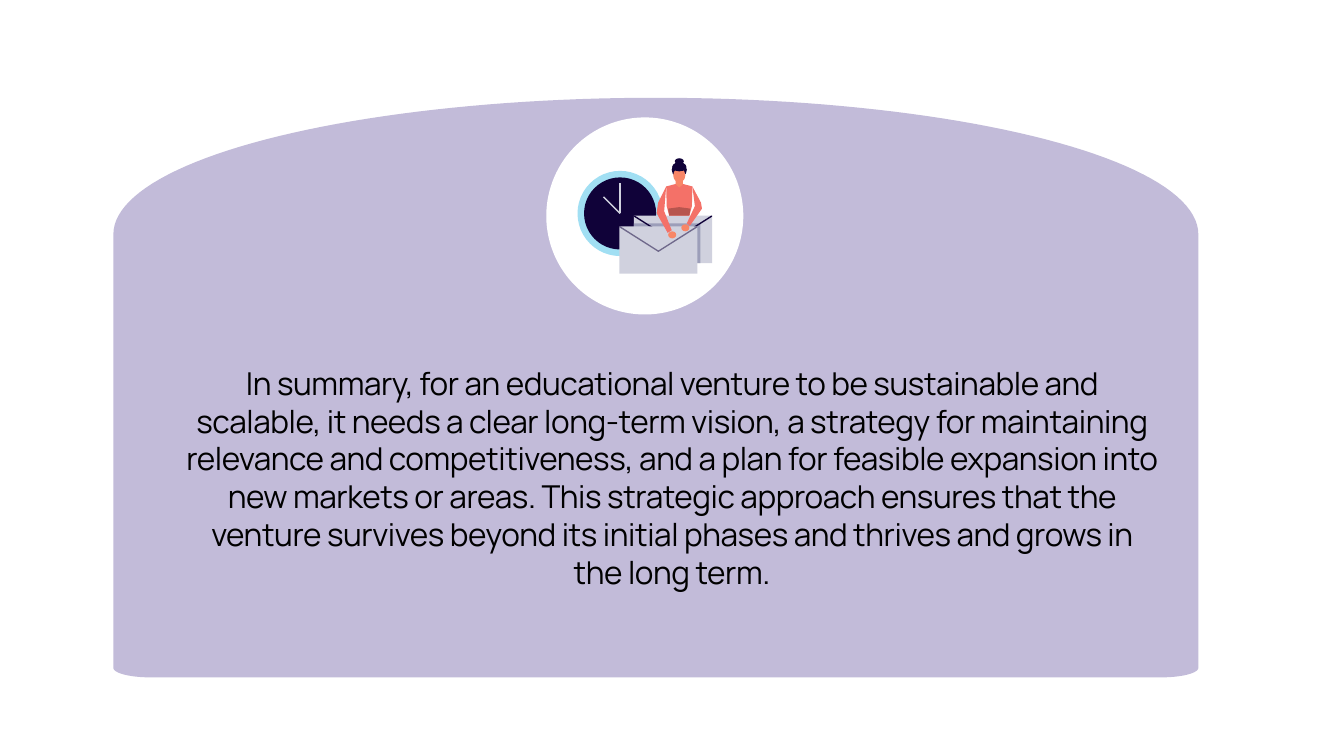
import math
from dataclasses import dataclass

import pptx
import pptx.dml.color
import pptx.enum.shapes
import pptx.enum.text
import pptx.oxml
import pptx.oxml.ns
import pptx.util
from pptx.util import Inches


@dataclass(frozen=True)
class Theme:
    lilac: str = "C2BBD9"
    white: str = "FFFFFF"
    black: str = "000000"
    navy: str = "100239"
    sky: str = "A1DFF3"
    paper: str = "D0D1DE"
    paper_shade: str = "9C9EB9"
    coral: str = "F47168"
    coral_shade: str = "B7554E"
    skin: str = "F88667"
    font: str = "Manrope"
    body_size: float = 45
    body_tracking: float = -0.6


THEME = Theme()
OVAL = pptx.enum.shapes.MSO_SHAPE.OVAL
RECTANGLE = pptx.enum.shapes.MSO_SHAPE.RECTANGLE


def rgb(color):
    return pptx.dml.color.RGBColor.from_string(color)


def paint(shape, color, opacity=None):
    shape.shadow.inherit = False
    shape.fill.solid()
    shape.fill.fore_color.rgb = rgb(color)
    shape.line.fill.background()
    if opacity is not None:
        fill_color = shape._element.spPr.find(".//" + pptx.oxml.ns.qn("a:srgbClr"))
        namespace = pptx.oxml.ns.nsdecls("a")
        fill_color.append(pptx.oxml.parse_xml(f'<a:alpha {namespace} val="{opacity * 1000}"/>'))


def add_preset(shapes, preset, left, top, width, height, color):
    paint(shapes.add_shape(preset, *map(Inches, (left, top, width, height))), color)


def add_polygon(shapes, left, top, points, color, opacity=None):
    corners = [(Inches(left + x), Inches(top + y)) for x, y in points]
    builder = shapes.build_freeform(*corners[0])
    builder.add_line_segments(corners[1:], close=True)
    paint(builder.convert_to_shape(), color, opacity)


def add_panel(shapes, left, top, width, height):
    """Panel with a wide arched top and slightly rounded bottom corners."""
    arch, foot = (width / 2, 2.71), (0.73, 0.19)
    points = []
    for quarter, (radius_x, radius_y) in enumerate((foot, foot, arch, arch)):
        center_x = radius_x if quarter in (1, 2) else width - radius_x
        center_y = height - radius_y if quarter < 2 else radius_y
        for degrees in range(quarter * 90, quarter * 90 + 91, 2):
            angle = math.radians(degrees)
            points.append((center_x + radius_x * math.cos(angle),
                           center_y + radius_y * math.sin(angle)))
    add_polygon(shapes, left, top, points, THEME.lilac)


def add_clock(shapes, left, top, size):
    rim, center = 0.13, size / 2
    add_preset(shapes, OVAL, left, top, size, size, THEME.sky)
    add_preset(shapes, OVAL, left + rim, top + rim, size - 2 * rim, size - 2 * rim, THEME.navy)
    for reach_x, reach_y in ((0, 0.61), (0.33, 0.33)):
        hand = shapes.add_connector(
            pptx.enum.shapes.MSO_CONNECTOR.STRAIGHT,
            *map(Inches, (left + center, top + center,
                          left + center - reach_x, top + center - reach_y)))
        hand.line.color.rgb = rgb(THEME.paper)
        hand.line.width = pptx.util.Pt(2)
        hand._element.spPr.append(pptx.oxml.parse_xml(
            f'<a:effectLst {pptx.oxml.ns.nsdecls("a")}/>'))


def add_envelope(shapes, left, top, opacity=None, shaded=False):
    width, height, edge = 1.55, 0.94, 0.02
    add_preset(shapes, RECTANGLE, left, top, width, height, THEME.paper)
    if shaded:
        add_preset(shapes, RECTANGLE, left, top + 0.15, 1.32, height - 0.15, THEME.paper_shade)
    flap = [(0, 0), (edge, 0), (width / 2, 0.48), (width - edge, 0), (width, 0),
            (width, edge), (width / 2, 0.51), (0, edge)]
    add_polygon(shapes, left, top, flap, THEME.navy, opacity)


def add_person(shapes, left, top):
    # Arms and hands
    left_arm = [(0.19, 0.56), (0.03, 0.88), (0, 1.09), (0.22, 1.48), (0.3, 1.43), (0.15, 1.05)]
    right_arm = [(0.71, 0.56), (0.88, 0.88), (0.9, 1), (0.66, 1.34), (0.6, 1.29), (0.76, 0.95)]
    for arm in (left_arm, right_arm):
        add_polygon(shapes, left, top, arm, THEME.coral)
    for x, y in ((0.23, 1.45), (0.49, 1.31)):
        add_preset(shapes, OVAL, left + x, top + y, 0.16, 0.14, THEME.skin)
    # Sweater and waistband
    middle = left + 0.45
    sweater = [(-0.26, 0.56), (-0.07, 0.51), (0.07, 0.51), (0.26, 0.56),
               (0.25, 0.95), (0.2, 1.14), (-0.2, 1.14), (-0.25, 0.95)]
    waistband = [(-0.22, 1), (0, 0.97), (0.22, 1), (0.2, 1.14), (-0.2, 1.14)]
    add_polygon(shapes, middle, top, sweater, THEME.coral)
    add_polygon(shapes, middle, top, waistband, THEME.coral_shade)
    # Neck, hair, face and bun
    neck = [(-0.07, 0.42), (0.07, 0.42), (0.07, 0.52), (0, 0.58), (-0.07, 0.52)]
    add_polygon(shapes, middle, top, neck, THEME.skin)
    for preset, y, width, height, color in (
            (OVAL, 0.08, 0.3, 0.3, THEME.navy),
            (OVAL, 0.2, 0.24, 0.28, THEME.skin),
            (OVAL, 0.08, 0.28, 0.18, THEME.navy),
            (OVAL, 0, 0.18, 0.12, THEME.navy)):
        add_preset(shapes, preset, middle - width / 2, top + y, width, height, color)


def add_badge(shapes, left, top, size):
    """White disc with a grouped clock, two envelopes and a person."""
    add_preset(shapes, OVAL, left, top, size, size, THEME.white)
    parts = shapes.add_group_shape().shapes
    add_clock(parts, left + 0.62, top + 1.06, 1.69)
    add_envelope(parts, left + 1.74, top + 1.95, shaded=True)
    add_envelope(parts, left + 1.45, top + 2.16, opacity=50)
    add_person(parts, left + 2.19, top + 0.81)


def add_summary(shapes, left, top, width, height, text):
    frame = shapes.add_textbox(*map(Inches, (left, top, width, height))).text_frame
    margins = {f"margin_{side}": Inches(0.05) for side in ("left", "top", "right", "bottom")}
    frame_format = {"word_wrap": True,
                    "auto_size": pptx.enum.text.MSO_AUTO_SIZE.SHAPE_TO_FIT_TEXT, **margins}
    for name, value in frame_format.items():
        setattr(frame, name, value)
    paragraph = frame.paragraphs[0]
    paragraph.alignment = pptx.enum.text.PP_ALIGN.CENTER
    run = paragraph.add_run()
    run.text = text
    for name, value in {"name": THEME.font, "size": pptx.util.Pt(THEME.body_size)}.items():
        setattr(run.font, name, value)
    run.font.color.rgb = rgb(THEME.black)
    run._r.get_or_add_rPr().set("spc", str(round(THEME.body_tracking * 100)))


def main():
    presentation = pptx.Presentation()
    presentation.slide_width, presentation.slide_height = Inches(26.67), Inches(15)
    shapes = presentation.slides.add_slide(presentation.slide_layouts[6]).shapes
    add_panel(shapes, 2.25, 1.94, 21.53, 11.5)
    add_badge(shapes, 10.84, 2.33, 3.91)
    add_summary(
        shapes, 3.63, 7.17, 19.41, 5.7,
        "In summary, for an educational venture to be sustainable and scalable, it needs a clear "
        "long-term vision, a strategy for maintaining relevance and competitiveness, and a plan for "
        "feasible expansion into new markets or areas. This strategic approach ensures that the "
        "venture survives beyond its initial phases and thrives and grows in the long term.")
    presentation.save("out.pptx")


if __name__ == "__main__":
    main()
